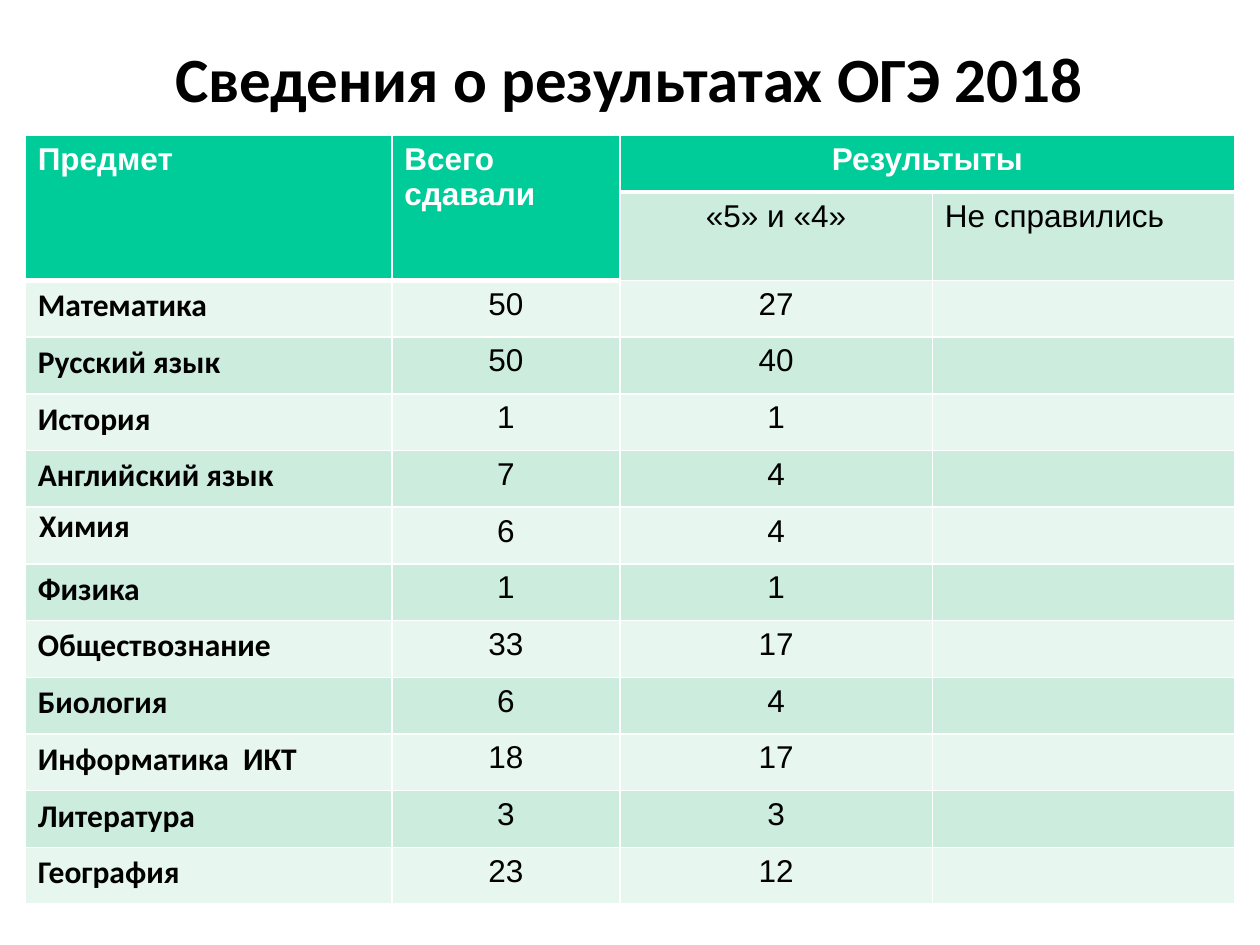
"""Build a slide with a table of exam results by subject."""
import pptx
import pptx.dml.color
import pptx.enum.text
import pptx.oxml
import pptx.oxml.ns
import pptx.util
from lxml import etree

Pt = pptx.util.Pt
ALIGN = pptx.enum.text.PP_ALIGN
ANCHOR = pptx.enum.text.MSO_ANCHOR

TITLE = "Сведения о результатах ОГЭ 2018"
HEAD = [
    ("Предмет", "Всего сдавали", "Результыты", ""),
    ("", "", "«5» и «4»", "Не справились"),
]
MARKS = [
    ("Математика", 50, 27),
    ("Русский язык", 50, 40),
    ("История", 1, 1),
    ("Английский язык", 7, 4),
    ("Химия", 6, 4),
    ("Физика", 1, 1),
    ("Обществознание", 33, 17),
    ("Биология", 6, 4),
    ("Информатика  ИКТ", 18, 17),
    ("Литература", 3, 3),
    ("География", 23, 12),
]
ROWS = HEAD + [(*mark, "") for mark in MARKS]
WIDTHS = [209.5, 130.3, 178.6, 173]
HEIGHTS = [32.4, 47.5] + [32.4] * len(MARKS)
MERGES = [((0, 0), (1, 0)), ((0, 1), (1, 1)), ((0, 2), (0, 3))]
BANDS = ["E7F6EF", "CCECDE"]
GREEN, WHITE, BLACK = "00CC99", "FFFFFF", "000000"

TITLE_FONT = {"name": "Calibri", "size": Pt(36), "bold": True}
HEAD_FONT = {"name": "Arial", "size": Pt(18), "bold": True}
NAME_FONT = {"name": "Calibri", "size": Pt(18), "bold": True}
BODY_FONT = {"name": "Arial", "size": Pt(18), "bold": False}
FRAME = {"word_wrap": True, "vertical_anchor": ANCHOR.TOP, "margin_top": Pt(12.5)}
TIGHT = {"margin_left": Pt(8), "margin_top": Pt(0)}


def tint(color, code):
    color.rgb = pptx.dml.color.RGBColor.from_string(code)


def apply(item, form):
    for key, value in form.items():
        setattr(item, key, value)


def write(frame, text, font, code, align):
    line = frame.paragraphs[0]
    line.alignment = align
    if text != "":
        run = line.add_run()
        run.text = str(text)
        apply(run.font, font)
        tint(run.font.color, code)


def edge(cell, widths):
    props = cell._tc.get_or_add_tcPr()
    for spot, (side, width) in enumerate(widths.items()):
        line = etree.Element(pptx.oxml.ns.qn(f"a:ln{side}"), w=str(Pt(width)))
        fill = etree.SubElement(line, pptx.oxml.ns.qn("a:solidFill"))
        etree.SubElement(fill, pptx.oxml.ns.qn("a:srgbClr"), val=WHITE)
        props.insert(spot, line)


def is_head(row, col):
    return row == 0 or (row == 1 and col < 2)


def style(cell, row, col, text):
    head = is_head(row, col)
    below = row > 0 and not head and is_head(row - 1, col)
    cell.fill.solid()
    tint(cell.fill.fore_color, GREEN if head else BANDS[row % 2])
    edge(cell, {"L": 1, "R": 1, "T": 3 if below else 1, "B": 3 if head else 1})
    font = HEAD_FONT if head else BODY_FONT if col else NAME_FONT
    mid = col == 2 or (col == 1 and not head)
    align = ALIGN.CENTER if mid else ALIGN.LEFT
    write(cell.text_frame, text, font, WHITE if head else BLACK, align)
    if text == "Химия":
        apply(cell, TIGHT)


def main():
    deck = pptx.Presentation()
    apply(deck, {"slide_width": Pt(720), "slide_height": Pt(540)})
    slide = deck.slides.add_slide(deck.slide_layouts[6])

    box = slide.shapes.add_textbox(Pt(36), Pt(10), Pt(647), Pt(113))
    apply(box.text_frame, FRAME)
    write(box.text_frame, TITLE, TITLE_FONT, BLACK, ALIGN.CENTER)

    table = slide.shapes.add_table(
        len(ROWS), len(WIDTHS), Pt(14.4), Pt(77.4), Pt(sum(WIDTHS)), Pt(sum(HEIGHTS))
    ).table
    for col, width in zip(table.columns, WIDTHS):
        col.width = Pt(width)
    for row, height in zip(table.rows, HEIGHTS):
        row.height = Pt(height)
    for start, end in MERGES:
        table.cell(*start).merge(table.cell(*end))
    for row, texts in enumerate(ROWS):
        for col, text in enumerate(texts):
            style(table.cell(row, col), row, col, text)

    deck.save("out.pptx")


if __name__ == "__main__":
    main()
